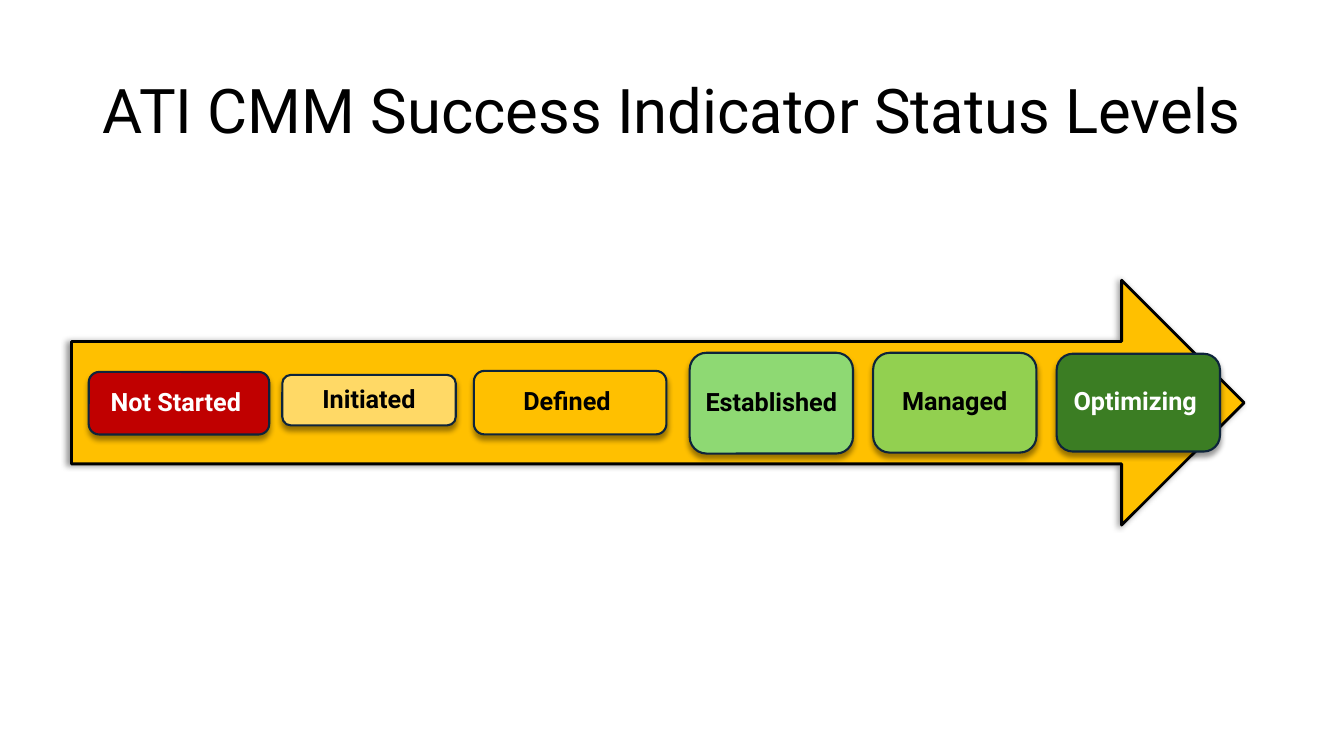
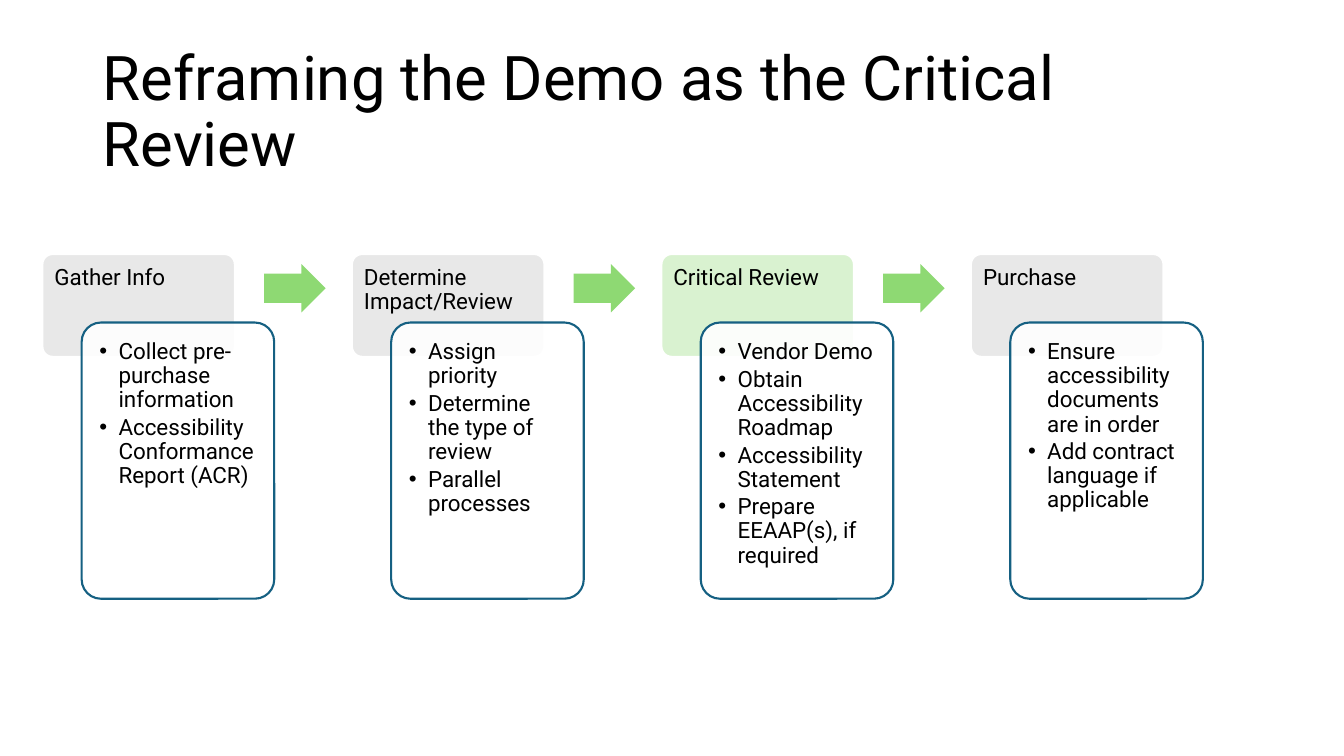
from lxml import etree
from pptx import Presentation
from pptx.dml.color import RGBColor
from pptx.enum.shapes import MSO_SHAPE as SHAPE
from pptx.enum.text import MSO_ANCHOR as ANCHOR, PP_ALIGN as ALIGN
from pptx.oxml.ns import qn
from pptx.util import Inches, Pt

# Shared style
FONT = "Roboto"
BLACK = RGBColor(0x00, 0x00, 0x00)
WHITE = RGBColor(0xFF, 0xFF, 0xFF)
RED = RGBColor(0xC0, 0x00, 0x00)
AMBER = RGBColor(0xFF, 0xC0, 0x00)
SAND = RGBColor(0xFF, 0xD9, 0x66)
GREEN = RGBColor(0x8E, 0xD9, 0x73)
LIME = RGBColor(0x92, 0xD0, 0x50)
FOREST = RGBColor(0x3B, 0x7D, 0x23)
PALE_GREEN = RGBColor(0xD9, 0xF2, 0xD0)
GREY = RGBColor(0xE8, 0xE8, 0xE8)
NAVY = RGBColor(0x0D, 0x24, 0x3B)
TEAL = RGBColor(0x15, 0x60, 0x82)

TITLE_BOX = (0.92, 0.4, 11.5, 1.45)

# Label, left, top, width, height, fill, text colour
STATUSES = [
    ("Not Started ", 0.88, 3.69, 1.79, 0.62, RED, WHITE),
    ("Initiated", 2.8, 3.72, 1.72, 0.5, SAND, BLACK),
    ("Defined ", 4.7, 3.68, 1.91, 0.63, AMBER, BLACK),
    ("Established", 6.84, 3.5, 1.62, 1, GREEN, BLACK),
    ("Managed", 8.66, 3.5, 1.62, 0.99, LIME, BLACK),
    ("Optimizing ", 10.48, 3.51, 1.62, 0.97, FOREST, WHITE),
]

STEPS = [
    ("Gather Info", GREY,
     ["Collect pre-purchase information",
      "Accessibility Conformance Report (ACR)"]),
    ("Determine Impact/Review", GREY,
     ["Assign priority", "Determine the type of review",
      "Parallel processes"]),
    ("Critical Review", PALE_GREEN,
     ["Vendor Demo", "Obtain Accessibility Roadmap",
      "Accessibility Statement", "Prepare EEAAP(s), if required"]),
    ("Purchase", GREY,
     ["Ensure accessibility documents are in order",
      "Add contract language if applicable"]),
]


def add_box(slide, kind, box, fill, line=None, width=1.5, adj=()):
    sp = slide.shapes.add_shape(kind, *map(Inches, box))
    sp.shadow.inherit = False
    sp.fill.solid()
    sp.fill.fore_color.rgb = fill
    if line is None:
        sp.line.fill.background()
    else:
        sp.line.color.rgb = line
        sp.line.width = Pt(width)
    for i, value in enumerate(adj):
        sp.adjustments[i] = value
    return sp


def add_shadow(sp, angle):
    effects = sp._element.spPr.find(qn("a:effectLst"))
    shadow = etree.SubElement(
        effects, qn("a:outerShdw"), blurRad=str(Pt(4)), dist=str(Pt(3)),
        dir=str(angle * 60000), algn="ctr", rotWithShape="0")
    color = etree.SubElement(shadow, qn("a:srgbClr"), val=str(BLACK))
    etree.SubElement(color, qn("a:alpha"), val="40000")


def set_opacity(sp, percent):
    color = sp._element.spPr.find(qn("a:solidFill"))[0]
    etree.SubElement(color, qn("a:alpha"), val=str(percent * 1000))


def add_bullet(p, indent):
    pPr = p._p.get_or_add_pPr()
    pPr.set("marL", str(Inches(indent)))
    pPr.set("indent", str(-Inches(indent)))
    etree.SubElement(pPr, qn("a:buFont"), typeface="Arial")
    etree.SubElement(pPr, qn("a:buChar"), char="•")


def write(sp, lines, size, color=BLACK, bold=False, align=ALIGN.LEFT,
          anchor=ANCHOR.TOP, margins=None, bullets=False):
    tf = sp.text_frame
    tf.word_wrap = True
    tf.vertical_anchor = anchor
    for side, value in (margins or {}).items():
        setattr(tf, f"margin_{side}", Inches(value))
    for i, line in enumerate(lines):
        p = tf.add_paragraph() if i else tf.paragraphs[0]
        p.alignment = align
        p.line_spacing = 0.9
        if bullets:
            p.space_after = Pt(2.4)
            add_bullet(p, 0.19)
        r = p.add_run()
        r.text = line
        font = {"name": FONT, "size": Pt(size), "bold": bold}
        for name, value in font.items():
            setattr(r.font, name, value)
        r.font.color.rgb = color


def add_titled_slide(prs, title):
    slide = prs.slides.add_slide(prs.slide_layouts[5])
    sp = slide.shapes.title
    for name, value in zip(("left", "top", "width", "height"), TITLE_BOX):
        setattr(sp, name, Inches(value))
    write(sp, [title], 44, anchor=ANCHOR.MIDDLE)
    return slide


# Status levels along one long arrow
def add_status_arrow(slide, box):
    arrow = add_box(slide, SHAPE.RIGHT_ARROW, box, AMBER, BLACK, 2)
    add_shadow(arrow, 180)
    margins = dict.fromkeys(("left", "top", "right", "bottom"), 0.07)
    for label, x, y, w, h, fill, color in STATUSES:
        sp = add_box(slide, SHAPE.ROUNDED_RECTANGLE, (x, y, w, h), fill, NAVY)
        add_shadow(sp, 90)
        write(sp, [label], 18, color, bold=True, align=ALIGN.CENTER,
              anchor=ANCHOR.MIDDLE, margins=margins)


# Process step: heading card with a list card overlapping it
def add_step(slide, x, y, heading, fill, items):
    card = add_box(slide, SHAPE.ROUNDED_RECTANGLE, (x, y, 1.91, 1.02),
                   fill, WHITE, adj=[0.1])
    write(card, [heading], 16,
          margins={"left": 0.09, "top": 0.09, "right": 0.09, "bottom": 0.07})
    body = add_box(slide, SHAPE.ROUNDED_RECTANGLE,
                   (x + 0.39, y + 0.68, 1.91, 2.74), WHITE, TEAL, adj=[0.1])
    set_opacity(body, 90)
    write(body, items, 16, bullets=True,
          margins=dict.fromkeys(("left", "top", "right", "bottom"), 0.12))


def add_process(slide, left, top, pitch):
    for i, (heading, fill, items) in enumerate(STEPS):
        x = left + i * pitch
        add_step(slide, x, top, heading, fill, items)
        if i < len(STEPS) - 1:
            add_box(slide, SHAPE.RIGHT_ARROW, (x + 2.2, top + 0.1, 0.61, 0.48),
                    GREEN, adj=[0.6, 0.5])


def main():
    prs = Presentation()
    prs.slide_width, prs.slide_height = Inches(13.33), Inches(7.5)
    slide = add_titled_slide(prs, "ATI CMM Success Indicator Status Levels")
    add_status_arrow(slide, (0.71, 2.78, 11.63, 2.43))
    slide = add_titled_slide(prs, "Reframing the Demo as the Critical Review")
    add_process(slide, 0.42, 2.52, 3.07)
    prs.save("out.pptx")


if __name__ == "__main__":
    main()
